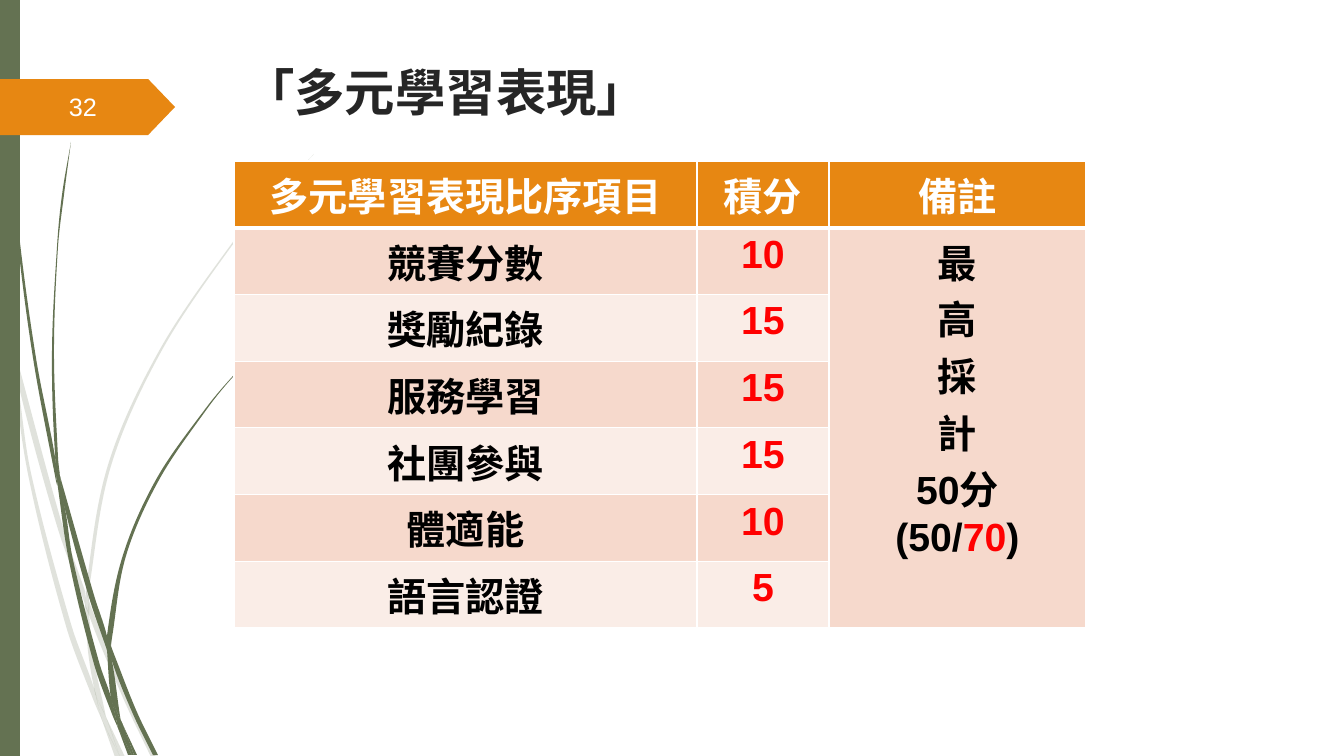
from lxml import etree
from pptx import Presentation, util as u
from pptx.dml.color import RGBColor
from pptx.enum import shapes, text
from pptx.oxml.ns import qn

PX = 914400 / 100.8
GREEN, ORANGE, WHITE, BLACK, RED = "647252", "E78712", "FFFFFF", "000000", "FF0000"
BANDS = ("F6D9CC", "FAEDE7")

PALE_BLADES = [
    ([(0, 301), (10, 347), (11, 353)], [(0, 284), (8, 325), (11, 353)]),
    ([(14, 348), (17, 379), (57, 526), (85, 604)], [(14, 348), (62, 524), (85, 591)]),
    ([(89, 601), (89, 615), (124, 700), (151, 757)], [(89, 601), (93, 612), (128, 698), (156, 757)]),
    ([(106, 717), (120, 757)], [(106, 717), (125, 757)]),
    ([(11, 353), (28, 474), (66, 626), (93, 699), (102, 720)],
     [(11, 353), (17, 379), (31, 473), (71, 624), (94, 688), (100, 713), (102, 720)]),
    ([(85, 604), (88, 651), (94, 688), (97, 698), (106, 717)],
     [(85, 604), (89, 615), (92, 651), (105, 712), (106, 717)]),
    ([(314, 154), (270, 199), (230, 246), (159, 351), (108, 465), (86, 589), (89, 601)],
     [(314, 154), (271, 200), (231, 247), (161, 352), (111, 466), (89, 589), (89, 601)]),
    ([(102, 720), (115, 757)], [(102, 720), (120, 757)]),
    ([(86, 591), (85, 604), (89, 615)], [(86, 591), (89, 601), (89, 615)]),
    ([(94, 688), (100, 713), (102, 720), (120, 757)], [(94, 688), (97, 698), (106, 717), (120, 757)]),
]
DARK_BLADES = [
    ([(3, 0), (3, 48), (7, 111), (17, 235), (33, 358), (56, 481), (57, 485)],
     [(3, 0), (5, 48), (8, 110), (19, 234), (36, 358), (55, 457), (57, 485)]),
    ([(60, 476), (65, 509), (89, 597), (107, 650)], [(60, 476), (94, 595), (107, 636), (107, 650)]),
    ([(111, 646), (112, 661), (133, 714), (153, 755)], [(111, 646), (114, 654), (137, 712), (158, 755)]),
    ([(57, 481), (69, 561), (94, 664), (112, 714), (118, 728)],
     [(57, 481), (65, 509), (73, 560), (99, 662), (111, 697), (117, 723), (118, 728)]),
    ([(71, 142), (62, 195), (57, 247), (52, 352), (55, 453), (60, 476)],
     [(71, 142), (64, 195), (58, 247), (54, 352), (58, 457), (60, 476)]),
    ([(123, 725), (134, 755)], [(123, 725), (137, 755)]),
    ([(55, 453), (57, 481), (65, 509)], [(55, 453), (60, 476), (65, 509)]),
    ([(262, 347), (233, 376), (206, 408), (157, 478), (123, 555), (107, 636), (111, 646)],
     [(263, 347), (233, 377), (207, 409), (159, 480), (126, 556), (112, 638), (111, 646)]),
    ([(118, 728), (128, 755)], [(118, 728), (132, 755)]),
    ([(107, 650), (111, 698), (117, 712), (123, 725)], [(107, 650), (112, 661), (121, 722), (123, 725)]),
    ([(107, 636), (107, 650), (112, 661)], [(107, 636), (111, 646), (112, 661)]),
    ([(111, 697), (117, 723), (118, 728), (132, 755)], [(111, 697), (117, 712), (123, 725), (134, 755)]),
]
HEADINGS = ("多元學習表現比序項目", "積分", "備註")
SCORES = [("競賽分數", "10"), ("獎勵紀錄", "15"), ("服務學習", "15"),
          ("社團參與", "15"), ("體適能", "10"), ("語言認證", "5")]
REMARK = ("最", "高", "採", "計", "50分")


def px(length):
    """Turn px into EMU."""
    return u.Emu(round(length * PX))


def paint(target, colour):
    """Give a fill or font one solid hex colour."""
    target_fill = getattr(target, "fill", target)
    target_fill.solid()
    target_fill.fore_color.rgb = RGBColor.from_string(colour)


def style(font, size, colour, bold=False, face="Arial"):
    """Set size, colour, weight and face of a font."""
    font.size, font.bold, font.name = u.Pt(size), bold, face
    paint(font, colour)


def flat(shape, colour):
    """Fill a shape and take away its line and shadow."""
    paint(shape, colour)
    shape.line.fill.background()
    shape.shadow.inherit = False


def edge_controls(knots):
    """Return the two curve control points of each step along an edge."""
    ends = zip([knots[0]] + knots[:-1], knots[1:] + [knots[-1]])
    slopes = [(x1 - x0) / (y1 - y0) for (x0, y0), (x1, y1) in ends]
    controls = []
    for (x0, y0), (x1, y1), m0, m1 in zip(knots, knots[1:], slopes, slopes[1:]):
        third = (y1 - y0) / 3
        controls.append([(x0 + m0 * third, y0 + third), (x1 - m1 * third, y1 - third)])
    return controls


def add_grass(slide, blades, left, top, opacity=100):
    """Draw one group of curved blades from their left and right edges."""
    group = slide.shapes.add_group_shape()
    for left_edge, right_edge in blades:
        outline = [(px(left + x), px(top + y)) for x, y in left_edge + right_edge[::-1]]
        builder = group.shapes.build_freeform(*outline[0], scale=1.0)
        builder.add_line_segments(outline[1:], close=True)
        blade = builder.convert_to_shape()
        flat(blade, GREEN)
        upward = [pair[::-1] for pair in edge_controls(right_edge)[::-1]]
        controls = edge_controls(left_edge) + [None] + upward
        for line, pair in zip(list(blade._element.iter(qn("a:lnTo"))), controls):
            if pair:
                line.tag = qn("a:cubicBezTo")
                for place, (x, y) in enumerate(pair):
                    line.insert(place, etree.Element(qn("a:pt"), x=str(px(left + x) - blade.left),
                                                     y=str(px(top + y) - blade.top)))
        if opacity < 100:
            shade = blade._element.spPr.find(qn("a:solidFill"))[0]
            etree.SubElement(shade, qn("a:alpha"), val=str(opacity * 1000))


def add_side_bar(slide, left, top, width, height):
    """Draw the green bar on the slide's edge."""
    bar = slide.shapes.add_shape(shapes.MSO_SHAPE.RECTANGLE, *map(px, (left, top, width, height)))
    flat(bar, GREEN)


def add_page_tag(slide, left, top, width, height):
    """Draw the orange arrow tag with the page number."""
    tag = slide.shapes.add_shape(shapes.MSO_SHAPE.PENTAGON, *map(px, (left, top, width, height)))
    tag.adjustments[0] = 0.48
    flat(tag, ORANGE)
    page = slide.shapes.add_textbox(px(left + 60), px(top + 7), px(86), px(40)).text_frame
    page.word_wrap = True
    page.vertical_anchor = text.MSO_ANCHOR.MIDDLE
    page.text = "32"
    style(page.paragraphs[0].font, 18, WHITE)


def add_title(slide, left, top, width, height):
    """Place and format the title."""
    title = slide.shapes.title
    title.left, title.top, title.width, title.height = map(px, (left, top, width, height))
    frame = title.text_frame
    frame.text = "「多元學習表現」"
    frame.auto_size = text.MSO_AUTO_SIZE.NONE
    frame.vertical_anchor = text.MSO_ANCHOR.MIDDLE
    frame.paragraphs[0].alignment = text.PP_ALIGN.LEFT
    style(frame.paragraphs[0].font, 36, "262626", True, "TeX Gyre Adventor")


def write_cell(cell, lines, colour, fill, above=1, below=1):
    """Fill a cell with centred bold lines and white borders."""
    paint(cell, fill)
    for place, (side, points) in enumerate(zip("LRTB", (1, 1, above, below))):
        border = etree.Element(qn("a:ln" + side), w=str(u.Pt(points)))
        ink = etree.SubElement(border, qn("a:solidFill"))
        etree.SubElement(ink, qn("a:srgbClr"), val=WHITE)
        cell._tc.tcPr.insert(place, border)
    cell.text = "\n".join(lines)
    for line in cell.text_frame.paragraphs:
        line.alignment = text.PP_ALIGN.CENTER
        style(line.font, 28, colour, True)


def add_score_table(slide, left, top, widths, height):
    """Draw the table of items, points and the merged remark."""
    rows = len(SCORES) + 1
    table = slide.shapes.add_table(rows, len(widths), *map(px, (left, top, sum(widths), height))).table
    for column, width in zip(table.columns, widths):
        column.width = px(width)
    for row in table.rows:
        row.height = px(height / rows)
    for column, heading in enumerate(HEADINGS):
        write_cell(table.cell(0, column), [heading], WHITE, ORANGE, below=3)
    for row, (item, points) in enumerate(SCORES, 1):
        band, above = BANDS[(row - 1) % 2], 3 if row == 1 else 1
        write_cell(table.cell(row, 0), [item], BLACK, band, above)
        write_cell(table.cell(row, 1), [points], RED, band, above)
    remark = table.cell(1, 2)
    remark.merge(table.cell(rows - 1, 2))
    write_cell(remark, REMARK, BLACK, BANDS[0], above=3)
    limit = remark.text_frame.add_paragraph()
    limit.alignment = text.PP_ALIGN.CENTER
    for part, colour in (("(50/", BLACK), ("70", RED), (")", BLACK)):
        run = limit.add_run()
        run.text = part
        style(run.font, 28, colour, True)


def main():
    """Build the slide and save it."""
    deck = Presentation()
    deck.slide_width, deck.slide_height = px(1344), px(756)
    slide = deck.slides.add_slide(deck.slide_layouts[5])
    add_grass(slide, PALE_BLADES, 0, 0, opacity=20)
    add_grass(slide, DARK_BLADES, 0, 0)
    add_side_bar(slide, 0, 0, 20, 756)
    add_page_tag(slide, -1, 79, 176, 56)
    add_title(slide, 234, 56, 983, 71)
    add_score_table(slide, 234, 161, (463, 132, 257), 467)
    deck.save("out.pptx")


if __name__ == "__main__":
    main()
